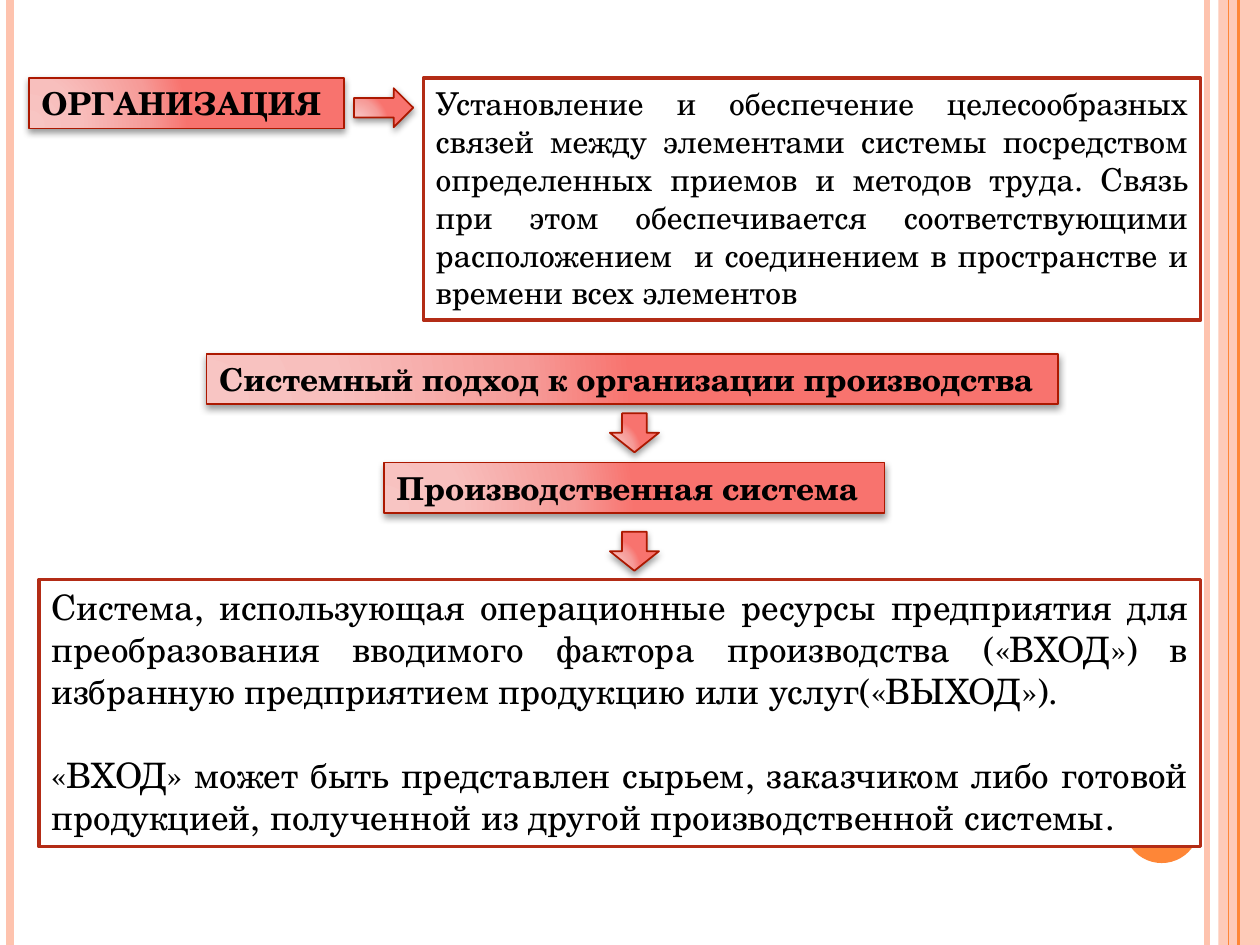
"""Build a slide on the systems approach to organising production."""
from lxml import etree
from pptx import Presentation
from pptx.dml.color import RGBColor
from pptx.enum.shapes import MSO_CONNECTOR, MSO_SHAPE
from pptx.enum.text import MSO_ANCHOR, PP_ALIGN
from pptx.oxml import parse_xml
from pptx.oxml.ns import qn
from pptx.util import Inches, Pt

RECT, OVAL = MSO_SHAPE.RECTANGLE, MSO_SHAPE.OVAL
RIGHT, DOWN = MSO_SHAPE.RIGHT_ARROW, MSO_SHAPE.DOWN_ARROW
STRAIGHT = MSO_CONNECTOR.STRAIGHT
TOP = MSO_ANCHOR.TOP
LEFT, JUSTIFY = PP_ALIGN.LEFT, PP_ALIGN.JUSTIFY
NS = 'xmlns:a="http://schemas.openxmlformats.org/drawingml/2006/main"'

THEME = {
    "font": "TeX Gyre Schola",
    "ink": "000000",
    "paper": "FFFFFF",
    "peach": "FEC3AE",
    "orange": "FE8637",
    "frame": "B32C16",
    "edge": "AC1800",
    "stops": [(0, "F8C5C3"), (30, "F8BFBD"), (75, "F69B98"), (100, "F8736E")],
    "label": 18,
    "body": 20,
}

prs = Presentation()
prs.slide_width, prs.slide_height = Inches(10), Inches(7.5)
slide = prs.slides.add_slide(prs.slide_layouts[6])


def add_box(kind, at, fill=None, edge=None, width=1):
    """Add a shape, glossy red with a shadow when no fill is given."""
    box = slide.shapes.add_shape(kind, *map(Inches, at))
    box.shadow.inherit = False
    if fill:
        box.fill.solid()
        box.fill.fore_color.rgb = RGBColor.from_string(fill)
    else:
        box.fill.background()
        props = box.element.spPr
        stops = "".join(
            f'<a:gs pos="{pos * 1000}"><a:srgbClr val="{tone}"/></a:gs>'
            for pos, tone in THEME["stops"])
        props.replace(props.find(qn("a:noFill")), parse_xml(
            f'<a:gradFill {NS} rotWithShape="1"><a:gsLst>{stops}</a:gsLst>'
            '<a:path path="circle"><a:fillToRect l="5000" t="100000" '
            'r="120000" b="10000"/></a:path></a:gradFill>'))
        props.find(qn("a:effectLst")).append(parse_xml(
            f'<a:outerShdw {NS} blurRad="{Pt(4)}" dist="{Pt(2)}" dir="5400000" '
            'rotWithShape="0"><a:srgbClr val="000000"><a:alpha val="40000"/>'
            '</a:srgbClr></a:outerShdw>'))
    if edge:
        box.line.color.rgb = RGBColor.from_string(edge)
        box.line.width = Pt(width)
    else:
        box.line.fill.background()
    return box


def write(box, text, size, align, bold=False):
    """Fill a box with evenly formatted paragraphs, one line apart."""
    frame = box.text_frame
    frame.word_wrap = True
    frame.vertical_anchor = TOP
    frame.text = text
    for rank, para in enumerate(frame.paragraphs):
        para.alignment = align
        para.space_before = Pt(size * 1.2 if rank else 0)
        for run in para.runs:
            run.font.name = THEME["font"]
            run.font.size = Pt(size)
            run.font.bold = bold
            run.font.color.rgb = RGBColor.from_string(THEME["ink"])


band = add_box(RECT, (9.67, 0, 0.33, 7.5), THEME["peach"])
tint = band.element.spPr.find(qn("a:solidFill"))[0]
etree.SubElement(tint, qn("a:alpha"), val="87000")

rules = [
    (9.58, "peach", 3),
    (0.08, "peach", 4.5),
    (9.83, "orange", 1.5),
    (9.75, "orange", 0.75),
]
for x, tone, width in rules:
    rule = slide.shapes.add_connector(
        STRAIGHT, Inches(x), 0, Inches(x), prs.slide_height)
    rule.line.color.rgb = RGBColor.from_string(THEME[tone])
    rule.line.width = Pt(width)
    etree.SubElement(rule.element.spPr, qn("a:effectLst"))

add_box(OVAL, (8.92, 6.25, 0.6, 0.6), THEME["orange"])

labels = [
    ((0.23, 0.62, 2.5, 0.4), "ОРГАНИЗАЦИЯ"),
    ((1.64, 2.81, 6.76, 0.4), "Системный подход к организации производства"),
    ((3.05, 3.67, 3.97, 0.4), "Производственная система"),
]
for at, text in labels:
    box = add_box(RECT, at, edge=THEME["edge"])
    write(box, text, THEME["label"], LEFT, bold=True)

panels = [
    ((3.36, 0.62, 6.17, 1.92), THEME["label"],
     "Установление и обеспечение целесообразных связей между элементами "
     "системы посредством определенных приемов и методов труда. Связь при "
     "этом обеспечивается соответствующими расположением  и соединением в "
     "пространстве и времени всех элементов"),
    ((0.31, 4.6, 9.22, 2.12), THEME["body"],
     "Система, использующая операционные ресурсы предприятия для "
     "преобразования вводимого фактора производства («ВХОД») в избранную "
     "предприятием продукцию или услуг(«ВЫХОД»).\n"
     "«ВХОД» может быть представлен сырьем, заказчиком либо готовой "
     "продукцией, полученной из другой производственной системы."),
]
for at, size, text in panels:
    box = add_box(RECT, at, THEME["paper"], THEME["frame"], 2)
    write(box, text, size, JUSTIFY)

arrows = [
    (RIGHT, (2.81, 0.7, 0.47, 0.31)),
    (DOWN, (4.84, 3.28, 0.39, 0.31)),
    (DOWN, (4.84, 4.22, 0.39, 0.31)),
]
for kind, at in arrows:
    add_box(kind, at, edge=THEME["edge"])

prs.save("out.pptx")
